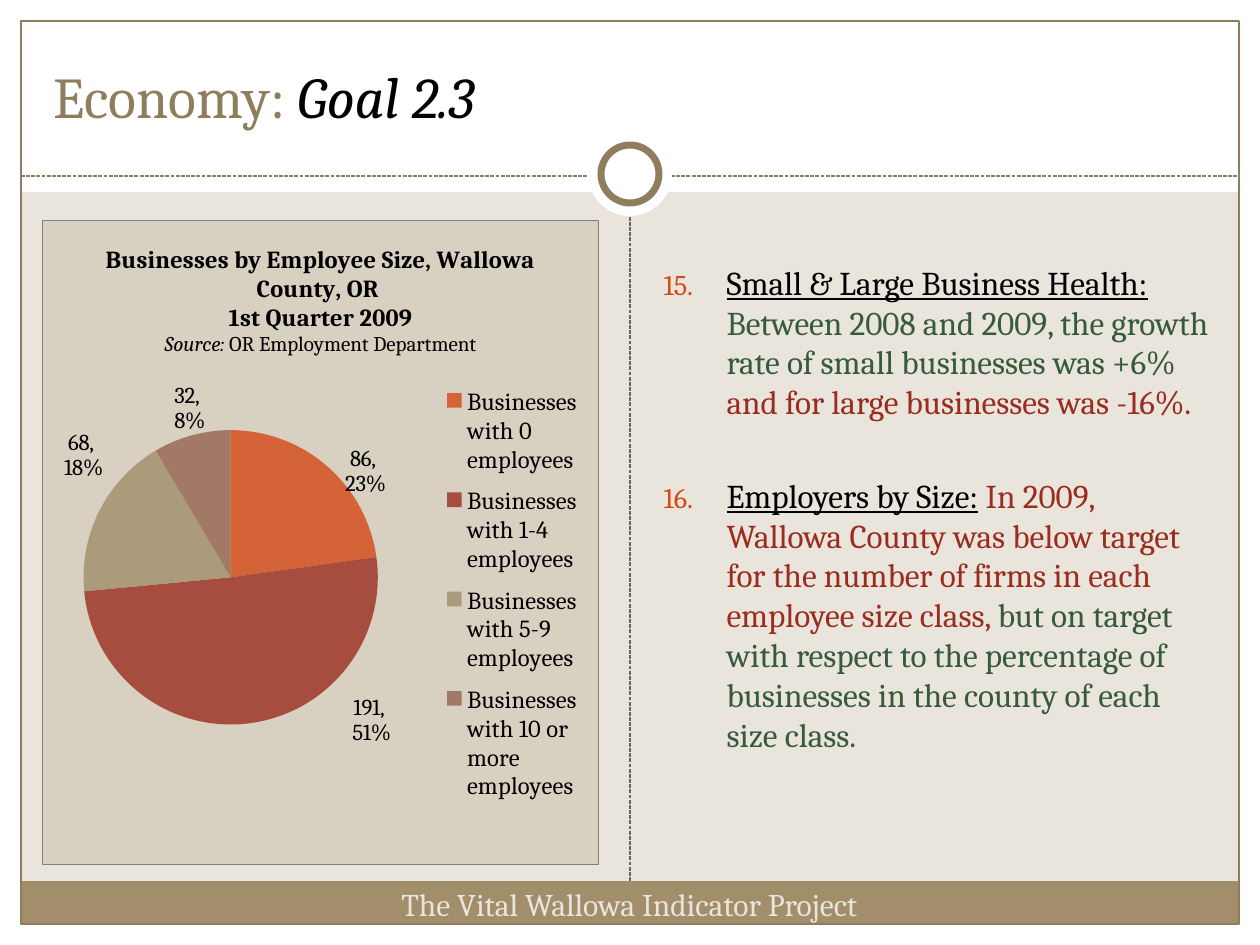
from pptx import Presentation
from pptx.chart.data import CategoryChartData
from pptx.dml.color import RGBColor
from pptx.enum.chart import XL_CHART_TYPE, XL_LABEL_POSITION, XL_LEGEND_POSITION
from pptx.enum.dml import MSO_LINE
from pptx.enum.shapes import MSO_CONNECTOR, MSO_SHAPE
from pptx.enum.text import MSO_ANCHOR, MSO_AUTO_SIZE, PP_ALIGN
from pptx.oxml import parse_xml
from pptx.oxml.ns import nsdecls
from pptx.util import Pt

PIE = XL_CHART_TYPE.PIE
OUTER = XL_LABEL_POSITION.OUTSIDE_END
RIGHT = XL_LEGEND_POSITION.RIGHT
DASH = MSO_LINE.SQUARE_DOT
LINE = MSO_CONNECTOR.STRAIGHT
RECT, OVAL = MSO_SHAPE.RECTANGLE, MSO_SHAPE.OVAL
LOW, TOP = MSO_ANCHOR.BOTTOM, MSO_ANCHOR.TOP
FIXED = MSO_AUTO_SIZE.NONE
LEFT, MID = PP_ALIGN.LEFT, PP_ALIGN.CENTER

SCALE = 914400 / 126
FACE = "Cambria"
HUES = {
    "paper": "E9E5DC", "white": "FFFFFF", "black": "000000", "tan": "A28E6A",
    "brown": "8F7D5E", "slate": "696464", "sand": "D8D0C0", "gray": "808080",
    "orange": "D34817", "red": "9B2D1F", "clay": "956251", "green": "375B3A",
}
SIZES = [
    ("Businesses with 0 employees", 86, "orange", (13, 36)),
    ("Businesses with 1-4 employees", 191, "red", (104, -35)),
    ("Businesses with 5-9 employees", 68, "tan", (10, -27)),
    ("Businesses with 10 or more employees", 32, "clay", (15, 6)),
]
HEADING = [
    [("Businesses by Employee Size, Wallowa County, OR ", {"size": Pt(14), "bold": True})],
    [("1st Quarter 2009", {"size": Pt(14), "bold": True})],
    [("Source:", {"size": Pt(12), "bold": False, "italic": True}),
     (" OR Employment Department", {"size": Pt(12), "bold": False})],
]
GOALS = [
    [("Small & Large Business Health:", "black"), (" ", "black"),
     ("Between 2008 and 2009, the growth rate of small businesses was +6%", "green"),
     (" and for large businesses was -16%.", "red")],
    [("Employers by Size:", "black"), (" ", "black"),
     ("In 2009, Wallowa County was below target for the number of firms in each "
      "employee size class, ", "red"),
     ("but on target with respect to the percentage of businesses in the county "
      "of each size class.", "green")],
]


def px(num):
    return round(num * SCALE)


def rgb(hue):
    return RGBColor.from_string(HUES[hue])


def apply(item, values):
    for key, value in values.items():
        setattr(item, key, value)


def place(item, box):
    apply(item, dict(zip(("left", "top", "width", "height"), map(px, box))))


def write(para, text, hue, **values):
    run = para.add_run()
    run.text = text
    apply(run.font, {"name": FACE, **values})
    run.font.color.rgb = rgb(hue)


def add_form(slide, kind, box, fill=None, edge=None, weight=0.75):
    form = slide.shapes.add_shape(kind, *map(px, box))
    form.shadow.inherit = False
    if fill:
        form.fill.solid()
        form.fill.fore_color.rgb = rgb(fill)
    else:
        form.fill.background()
    if edge:
        form.line.color.rgb = rgb(edge)
        form.line.width = Pt(weight)
    else:
        form.line.fill.background()
    return form


def add_rule(slide, start, end, hue):
    rule = slide.shapes.add_connector(LINE, *map(px, start + end))
    rule.line.color.rgb = rgb(hue)
    apply(rule.line, {"width": Pt(0.75), "dash_style": DASH})
    rule._element.spPr.append(parse_xml(f"<a:effectLst {nsdecls('a')}/>"))
    return rule


def add_frame(slide, box):
    x, y, w, h = box
    edge, band, foot = 21, 192, 43
    for strip in ((x, y + h - edge, w, edge), (x, y, w, band),
                  (x, y, edge, h), (x + w - edge, y, edge, h)):
        add_form(slide, RECT, strip, "white")
    inner = (x + edge, y + edge, w - 2 * edge, h - 2 * edge)
    bar = add_form(slide, RECT, (inner[0], y + h - edge - foot, inner[2], foot), "tan")
    add_form(slide, RECT, inner, edge="brown")
    level, mid = y + 176, x + w // 2
    add_rule(slide, (x + edge, level), (x + w - edge, level), "brown")
    hub = level - 2
    for size, edge_hue in ((84, None), (58, "brown")):
        add_form(slide, OVAL, (mid - size // 2, hub - size // 2, size, size),
                 "white", edge_hue, 4)
    split = add_rule(slide, (mid, y + 881), (mid, hub + 42), "slate")
    split.begin_connect(bar, 0)


def set_title(slide, box):
    title = slide.shapes.title
    place(title, box)
    frame = title.text_frame
    apply(frame, {"vertical_anchor": LOW, "auto_size": FIXED, "word_wrap": True})
    para = frame.paragraphs[0]
    para.alignment = LEFT
    write(para, "Economy: ", "brown", size=Pt(33))
    write(para, "Goal 2.3", "black", size=Pt(33), italic=True)
    slide.shapes._spTree.append(title._element)


def set_goals(slide, box):
    body = slide.placeholders[1]
    place(body, box)
    body.fill.solid()
    body.fill.fore_color.rgb = rgb("paper")
    frame = body.text_frame
    apply(frame, {"vertical_anchor": TOP, "auto_size": FIXED,
                  "word_wrap": True, "margin_top": px(52)})
    for num, parts in enumerate(GOALS):
        para = frame.add_paragraph() if num else frame.paragraphs[0]
        para.space_before = Pt(30.5 if num else 0)
        props = para._p.get_or_add_pPr()
        props.set("marL", str(px(63)))
        props.set("indent", str(px(-63)))
        for mark in (f'<a:buClr {nsdecls("a")}><a:srgbClr val="{HUES["orange"]}"/></a:buClr>',
                     f'<a:buSzPct {nsdecls("a")} val="85000"/>',
                     f'<a:buFont {nsdecls("a")} typeface="{FACE}"/>',
                     f'<a:buAutoNum {nsdecls("a")} type="arabicPeriod" startAt="15"/>'):
            props.append(parse_xml(mark))
        for spot, (text, hue) in enumerate(parts):
            write(para, text, hue, size=Pt(19), underline=spot == 0)
    slide.shapes._spTree.append(body._element)


def add_foot(slide, box):
    note = slide.shapes.add_textbox(*map(px, box))
    note.text_frame.word_wrap = True
    para = note.text_frame.paragraphs[0]
    para.alignment = MID
    write(para, "The Vital Wallowa Indicator Project", "paper", size=Pt(18))


def pin(part, spot, box, modes=""):
    for old in part.findall("{*}layout"):
        part.remove(old)
    whole = (box[2], box[3]) * 2
    sides = "".join(f'<c:{key} val="{num / full}"/>'
                    for key, num, full in zip("xywh", spot, whole))
    return parse_xml(f'<c:layout {nsdecls("c")}><c:manualLayout>{modes}{sides}'
                     '</c:manualLayout></c:layout>')


def set_label(point, lines, shift, box):
    label = point.data_label
    frame = label.text_frame
    for row, text in enumerate(lines):
        para = frame.add_paragraph() if row else frame.paragraphs[0]
        write(para, text, "black", size=Pt(13))
    label.position = OUTER
    mark = label._dLbl
    mark.find("{*}showPercent").set("val", "1")
    mark.find("{*}idx").addnext(pin(mark, shift, box))


def add_pie(slide, box):
    data = CategoryChartData()
    names, counts, hues, shifts = zip(*SIZES)
    data.categories = names
    data.add_series("Series 1", counts)
    chart = slide.shapes.add_chart(PIE, *map(px, box), data).chart
    apply(chart.font, {"name": FACE, "size": Pt(10)})
    chart.font.color.rgb = rgb("black")
    root = chart._chartSpace.chart
    root.addnext(parse_xml(
        f'<c:spPr {nsdecls("c", "a")}><a:solidFill><a:srgbClr val="{HUES["sand"]}"/></a:solidFill>'
        f'<a:ln w="9525"><a:solidFill><a:srgbClr val="{HUES["gray"]}"/></a:solidFill></a:ln></c:spPr>'))
    frame = chart.chart_title.text_frame
    for num, parts in enumerate(HEADING):
        para = frame.add_paragraph() if num else frame.paragraphs[0]
        for text, values in parts:
            write(para, text, "black", **values)
    chart.has_legend = True
    apply(chart.legend, {"position": RIGHT, "include_in_layout": False})
    apply(chart.legend.font, {"name": FACE, "size": Pt(14)})
    modes = '<c:xMode val="edge"/><c:yMode val="edge"/>'
    key = chart.legend._element
    key.find("{*}legendPos").addnext(pin(key, (398, 155, 145, 440), box, modes))
    area = root.plotArea
    area.insert(0, pin(area, (41, 210, 295, 295), box,
                       '<c:layoutTarget val="inner"/>' + modes))
    plot = chart.plots[0]
    plot.vary_by_categories = True
    series = plot.series[0]
    labels = series.data_labels
    apply(labels, {"show_value": True, "show_percentage": True, "position": OUTER})
    apply(labels.font, {"name": FACE, "size": Pt(13)})
    for lead in labels._element.findall("{*}showLeaderLines"):
        lead.set("val", "0")
    for num, (count, hue, shift) in enumerate(zip(counts, hues, shifts)):
        point = series.points[num]
        point.format.fill.solid()
        point.format.fill.fore_color.rgb = rgb(hue)
        tone = point.format.fill._xPr.find(".//{*}srgbClr")
        tone.append(parse_xml(f'<a:alpha {nsdecls("a")} val="80000"/>'))
        set_label(point, (f"{count}, ", f"{count / sum(counts):.0%}"), shift, box)


def main():
    deck = Presentation()
    apply(deck, {"slide_width": px(1260), "slide_height": px(945)})
    slide = deck.slides.add_slide(deck.slide_layouts[1])
    slide.background.fill.solid()
    slide.background.fill.fore_color.rgb = rgb("paper")
    add_frame(slide, (0, 0, 1260, 945))
    set_title(slide, (41, 31, 1176, 105))
    set_goals(slide, (651, 210, 577, 651))
    add_foot(slide, (346, 879, 567, 50))
    add_pie(slide, (42, 220, 557, 645))
    deck.save("out.pptx")


if __name__ == "__main__":
    main()
